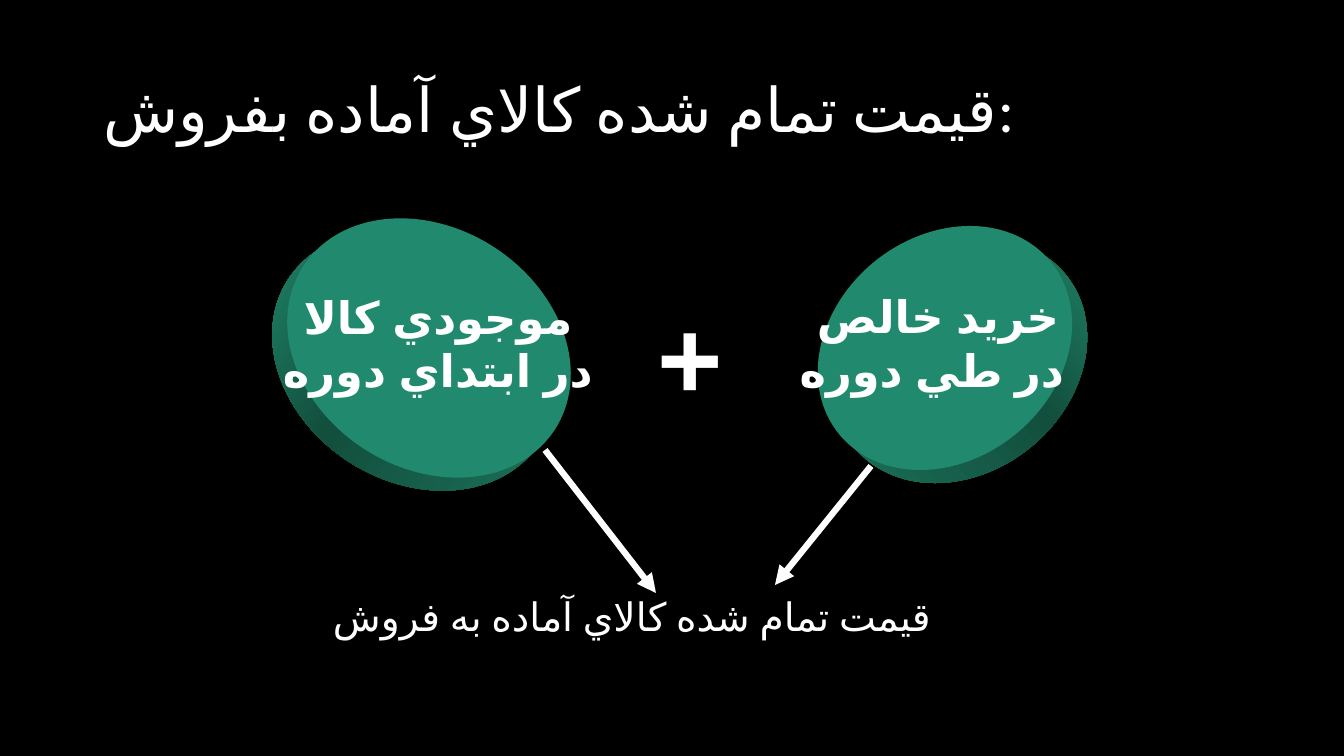
from lxml import etree
from pptx import Presentation
from pptx import util as u
from pptx.dml import color
from pptx.enum import lang, shapes, text
from pptx.oxml import ns, parse_xml

WHITE, BLACK, FACE = "FFFFFF", "000000", "21896D"
RIM_STOPS = ((0, "26997A"), (43, "124F3D"), (100, "1E7A61"))


def px(length):
    """Turn px into EMU at 100.8 px to the inch."""
    return u.Emu(round(length * 914400 / 100.8))


def rgb(code):
    """Turn a hex string into a colour."""
    return color.RGBColor.from_string(code)


def place(part, box):
    """Move a part to a box of left, top, width and height."""
    part.left, part.top, part.width, part.height = map(px, box)


def write(frame, words, size, font, align, bold=False, rtl=False):
    """Set the words of a frame and format every paragraph and run."""
    frame.text = words
    frame.auto_size = text.MSO_AUTO_SIZE.NONE
    for paragraph in frame.paragraphs:
        paragraph.alignment = align
        if rtl:
            paragraph._p.get_or_add_pPr().set("rtl", "1")
        for run in paragraph.runs:
            run.font.size, run.font.name, run.font.bold = u.Pt(size), font, bold
            run.font.color.rgb = rgb(WHITE)
            run.font.language_id = lang.MSO_LANGUAGE_ID.FARSI


def add_heading(slide, box, words):
    """Fill the title placeholder."""
    title = slide.shapes.title
    place(title, box)
    write(title.text_frame, words, 44, "Calibri", text.PP_ALIGN.LEFT)
    title.text_frame.vertical_anchor = text.MSO_ANCHOR.MIDDLE
    title.text_frame.paragraphs[0].line_spacing = 0.9


def add_result(slide, box, words):
    """Fill the body placeholder with the unbulleted result."""
    result = slide.placeholders[1]
    place(result, box)
    result.line.color.rgb, result.line.width = rgb(BLACK), u.Pt(0.75)
    write(result.text_frame, words, 28, "Calibri", text.PP_ALIGN.LEFT)
    paragraph = result.text_frame.paragraphs[0]
    paragraph.line_spacing, paragraph.space_before = 0.9, u.Pt(10)
    properties = paragraph._p.get_or_add_pPr()
    properties.set("marL", str(u.Inches(0.25)))
    properties.set("indent", str(u.Inches(-0.25)))
    etree.SubElement(properties, ns.qn("a:buNone"))


def add_label(slide, box, words, size, align, rtl=False):
    """Add a bold unwrapped label."""
    label = slide.shapes.add_textbox(*map(px, box))
    write(label.text_frame, words, size, "Arial", align, True, rtl)
    label.text_frame.word_wrap = False
    return label


def add_oval(slide, center, size, tilt):
    """Add a tilted oval round its center."""
    (x, y), (width, height) = center, size
    oval = slide.shapes.add_shape(
        shapes.MSO_SHAPE.OVAL, px(x - width / 2), px(y - height / 2), px(width), px(height))
    oval.rotation = tilt
    oval.shadow.inherit = False
    oval.line.fill.background()
    return oval


def shade_rim(rim, stops):
    """Give the rim a gradient along its long axis."""
    marks = "".join(
        f'<a:gs pos="{percent * 1000}"><a:srgbClr val="{code}"/></a:gs>' for percent, code in stops)
    gradient = parse_xml(
        f'<a:gradFill {ns.nsdecls("a")} rotWithShape="1"><a:gsLst>{marks}</a:gsLst>'
        '<a:lin ang="0" scaled="0"/></a:gradFill>')
    rim._element.spPr.find(ns.qn("a:prstGeom")).addnext(gradient)


def add_disc(slide, box, words, face_shift, size, tilt, rim_shift):
    """Add a thick tilted disc and its label, centered on the box."""
    left, top, width, height = box
    x, y = left + width / 2 + face_shift[0], top + height / 2 + face_shift[1]
    rim = add_oval(slide, (x + rim_shift, y + 13), size, tilt)
    stops = RIM_STOPS
    if rim_shift > 0:
        stops = [(100 - percent, code) for percent, code in reversed(RIM_STOPS)]
    shade_rim(rim, stops)
    face = add_oval(slide, (x, y), size, tilt)
    face.fill.solid()
    face.fill.fore_color.rgb = rgb(FACE)
    label = add_label(slide, box, words, 32, text.PP_ALIGN.CENTER, True)
    label.text_frame.vertical_anchor = text.MSO_ANCHOR.MIDDLE


def add_arrow(slide, start, end):
    """Add a white arrow from start to end."""
    arrow = slide.shapes.add_connector(shapes.MSO_CONNECTOR.STRAIGHT, *map(px, start + end))
    arrow.line.color.rgb, arrow.line.width = rgb(WHITE), u.Pt(4.5)
    head = etree.SubElement(arrow.line._get_or_add_ln(), ns.qn("a:tailEnd"))
    head.set("type", "triangle")
    etree.SubElement(arrow._element.spPr, ns.qn("a:effectLst"))


def main():
    """Build the slide and save it."""
    deck = Presentation()
    deck.slide_width, deck.slide_height = px(1344), px(756)
    slide = deck.slides.add_slide(deck.slide_layouts[1])
    slide.background.fill.solid()
    slide.background.fill.fore_color.rgb = rgb(BLACK)
    add_heading(slide, (93, 40, 1159, 146), "قيمت تمام شده كالاي آماده بفروش:")
    add_result(slide, (323, 593, 643, 65), "قيمت تمام شده كالاي آماده به فروش")
    add_disc(slide, (799, 212, 278, 262), "خريد خالص\n در طي دوره",
             (7, 5), (273, 223), -39, 15)
    add_disc(slide, (283, 204, 310, 278), "موجودي كالا\nدر ابتداي دوره",
             (-9, 5), (300, 240), 33, -15)
    add_arrow(slide, (871, 466), (775, 585))
    add_arrow(slide, (545, 450), (656, 593))
    add_label(slide, (648, 283, 58, 146), "+", 80, text.PP_ALIGN.LEFT)
    deck.save("out.pptx")


if __name__ == "__main__":
    main()
